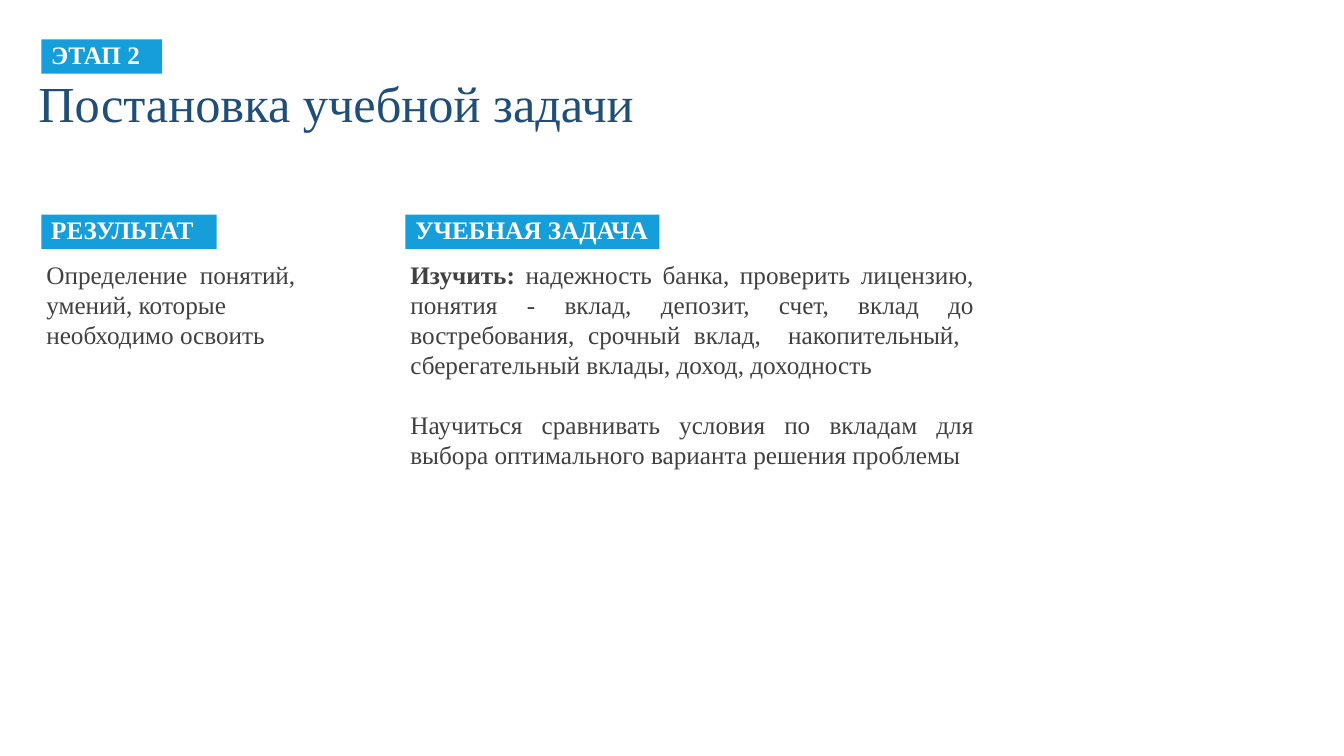
from pptx import Presentation
from pptx.dml.color import RGBColor
from pptx.enum.shapes import MSO_SHAPE as Shape
from pptx.enum.text import MSO_ANCHOR as Anchor, MSO_AUTO_SIZE as AutoSize, PP_ALIGN as Align
from pptx.oxml.ns import qn
from pptx.util import Inches, Pt

COLORS = {"title": "1F4E79", "label": "159EDA", "label_text": "FFFFFF", "body": "404040"}
FONT = "Times New Roman"
LABEL_HEIGHT = 0.34
COLUMN_LABEL_TOP = 2.13
COLUMN_TEXT_TOP = 2.52
TEXT_OFFSET = -0.05

COLUMNS = [
    {
        "label": "РЕЗУЛЬТАТ", "left": 0.41, "label_width": 1.74,
        "text_width": 3.22, "text_height": 1.01, "align": Align.LEFT,
        "paragraphs": [("", "Определение  понятий, умений, которые необходимо освоить")],
    },
    {
        "label": "УЧЕБНАЯ ЗАДАЧА", "left": 4.02, "label_width": 2.52,
        "text_width": 5.79, "text_height": 2.22, "align": Align.JUSTIFY,
        "paragraphs": [
            ("Изучить: ", "надежность банка, проверить лицензию, понятия - вклад, депозит, "
                          "счет, вклад до востребования, срочный вклад,  накопительный,  "
                          "сберегательный вклады, доход, доходность"),
            ("", "Научиться сравнивать условия по вкладам для выбора оптимального "
                 "варианта решения проблемы"),
        ],
    },
]


def place(shape, left, top, width, height):
    """Set the position and size of a shape in inches."""
    shape.left, shape.top = Inches(left), Inches(top)
    shape.width, shape.height = Inches(width), Inches(height)


def format_font(paragraph, size, color, bold=None):
    """Set the font of a whole paragraph."""
    font = paragraph.font
    font.name, font.size, font.bold = FONT, Pt(size), bold
    font.color.rgb = RGBColor.from_string(COLORS[color])


def remove_bullet(paragraph):
    """Drop the bullet and hanging indent inherited from the layout."""
    properties = paragraph._p.get_or_add_pPr()
    properties.set("marL", "0")
    properties.set("indent", "0")
    properties.insert_element_before(
        properties.makeelement(qn("a:buNone"), {}), "a:tabLst", "a:defRPr", "a:extLst")


def fill_title(title, text):
    """Write the slide title at the top left."""
    place(title, 0.28, 0.73, 7.47, 1.17)
    frame = title.text_frame
    frame.text = text
    frame.vertical_anchor = Anchor.TOP
    frame.auto_size = AutoSize.NONE
    paragraph = frame.paragraphs[0]
    paragraph.alignment = Align.LEFT
    paragraph.line_spacing = 0.9
    format_font(paragraph, 36, "title")


def add_label(slide, text, left, top, width):
    """Add a blue label with bold white text."""
    label = slide.shapes.add_shape(
        Shape.RECTANGLE, Inches(left), Inches(top), Inches(width), Inches(LABEL_HEIGHT))
    label.shadow.inherit = False
    label.fill.solid()
    label.fill.fore_color.rgb = RGBColor.from_string(COLORS["label"])
    label.line.fill.background()
    frame = label.text_frame
    frame.text = text
    frame.word_wrap = True
    frame.vertical_anchor = Anchor.MIDDLE
    paragraph = frame.paragraphs[0]
    paragraph.alignment = Align.LEFT
    paragraph.line_spacing = 0.9
    format_font(paragraph, 18, "label_text", True)


def fill_column(body, column):
    """Write the paragraphs of a column into its body placeholder."""
    place(body, column["left"] + TEXT_OFFSET, COLUMN_TEXT_TOP,
          column["text_width"], column["text_height"])
    frame = body.text_frame
    frame.auto_size = AutoSize.SHAPE_TO_FIT_TEXT
    for index, (lead, text) in enumerate(column["paragraphs"]):
        paragraph = frame.add_paragraph() if index else frame.paragraphs[0]
        if lead:
            run = paragraph.add_run()
            run.text = lead
            run.font.bold = True
        paragraph.add_run().text = text
        paragraph.alignment = column["align"]
        paragraph.space_before = Pt(20.7 if index else 0)
        remove_bullet(paragraph)
        format_font(paragraph, 18, "body")


def main():
    """Build the slide and save it."""
    presentation = Presentation()
    presentation.slide_width, presentation.slide_height = Inches(13.33), Inches(7.5)
    slide = presentation.slides.add_slide(presentation.slide_layouts.get_by_name("Two Content"))
    title, *bodies = slide.placeholders
    fill_title(title, "Постановка учебной задачи")
    add_label(slide, "ЭТАП 2", COLUMNS[0]["left"], 0.39, 1.2)
    for body, column in zip(bodies, COLUMNS):
        add_label(slide, column["label"], column["left"], COLUMN_LABEL_TOP, column["label_width"])
        fill_column(body, column)
    presentation.save("out.pptx")


if __name__ == "__main__":
    main()
